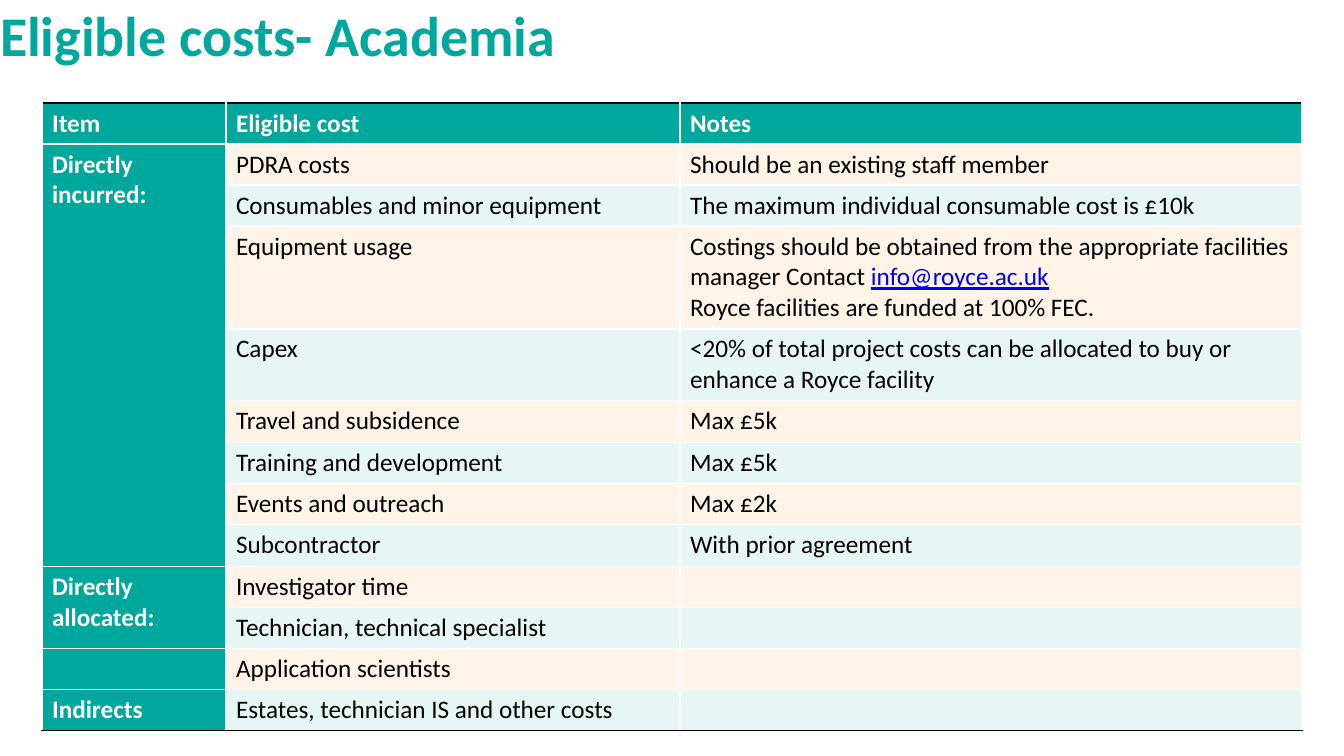
from lxml import etree
from pptx import Presentation, util as u
from pptx.dml.color import RGBColor
from pptx.enum import text
from pptx.oxml import ns

EMU_PER_PX = 914400 / 100.8
TEAL, PEACH, MINT = "00A79D", "FFF4E7", "E6F6F5"
WHITE, BLACK, LINK_BLUE = "FFFFFF", "000000", "0000FF"

HEADINGS = ("Item", "Eligible cost", "Notes")
CONTACT = "info@royce.ac.uk"
COSTS = [
    ("Directly incurred:", "PDRA costs", "Should be an existing staff member"),
    ("", "Consumables and minor equipment",
     "The maximum individual consumable cost is £10k"),
    ("", "Equipment usage",
     "Costings should be obtained from the appropriate facilities manager "
     f"Contact {CONTACT}\nRoyce facilities are funded at 100% FEC."),
    ("", "Capex",
     "<20% of total project costs can be allocated to buy or enhance "
     "a Royce facility"),
    ("", "Travel and subsidence", "Max £5k"),
    ("", "Training and development", "Max £5k"),
    ("", "Events and outreach", "Max £2k"),
    ("", "Subcontractor", "With prior agreement"),
    ("Directly allocated:", "Investigator time", ""),
    ("", "Technician, technical specialist", ""),
    ("", "Application scientists", ""),
    ("Indirects", "Estates, technician IS and other costs", ""),
]
ITEM_SPANS = [(1, 8), (9, 10)]
COLUMN_WIDTHS = (184, 454, 622)
ROW_HEIGHTS = (41, 41, 41, 103, 71, 42, 41, 41, 42, 41, 41, 41, 40)


def px(length):
    return u.Emu(round(length * EMU_PER_PX))


def rgb(value):
    return RGBColor.from_string(value)


def style_run(run, size, color, bold):
    run.font.name = "Calibri"
    run.font.size = u.Pt(size)
    run.font.bold = bold
    run.font.color.rgb = rgb(color)


def set_borders(cell, top, bottom):
    properties = cell._tc.get_or_add_tcPr()
    sides = (("lnL", WHITE), ("lnR", WHITE), ("lnT", top), ("lnB", bottom))
    for side, color in sides:
        line = etree.SubElement(properties, ns.qn(f"a:{side}"), w=str(u.Pt(1)))
        fill = etree.SubElement(line, ns.qn("a:solidFill"))
        etree.SubElement(fill, ns.qn("a:srgbClr"), val=color)


def write_paragraph(paragraph, wording, color, bold):
    before, contact, after = wording.partition(CONTACT)
    for part in filter(None, (before, contact, after)):
        run = paragraph.add_run()
        run.text = part
        style_run(run, 18, LINK_BLUE if part == CONTACT else color, bold)
        if part == CONTACT:
            run.font.underline = True


def write_cell(cell, wording, color, bold):
    frame = cell.text_frame
    for index, line in enumerate(wording.split("\n")):
        paragraph = frame.add_paragraph() if index else frame.paragraphs[0]
        write_paragraph(paragraph, line, color, bold)


def add_title(slide, wording):
    title = slide.shapes.title
    title.left, title.top, title.width, title.height = px(0), px(0), px(646), px(70)
    frame = title.text_frame
    frame.text = wording
    frame.word_wrap = True
    frame.vertical_anchor = text.MSO_ANCHOR.TOP
    frame.margin_left = frame.margin_right = frame.margin_bottom = 0
    frame.margin_top = px(1)
    paragraph = frame.paragraphs[0]
    paragraph.alignment = text.PP_ALIGN.LEFT
    style_run(paragraph.runs[0], 40, TEAL, True)


def add_cost_table(slide):
    rows = [HEADINGS] + COSTS
    table = slide.shapes.add_table(
        len(rows), len(HEADINGS), px(42), px(103),
        px(sum(COLUMN_WIDTHS)), px(sum(ROW_HEIGHTS))).table
    for column, width in zip(table.columns, COLUMN_WIDTHS):
        column.width = px(width)
    for row, height in zip(table.rows, ROW_HEIGHTS):
        row.height = px(height)
    for r, wordings in enumerate(rows):
        for c, wording in enumerate(wordings):
            cell = table.cell(r, c)
            heading = r == 0 or c == 0
            set_borders(cell, BLACK if r == 0 else WHITE,
                        BLACK if r == len(rows) - 1 else WHITE)
            cell.fill.solid()
            band = PEACH if r % 2 else MINT
            cell.fill.fore_color.rgb = rgb(TEAL if heading else band)
            write_cell(cell, wording, WHITE if heading else BLACK, heading)
    for first, last in ITEM_SPANS:
        table.cell(first, 0).merge(table.cell(last, 0))


def main():
    deck = Presentation()
    deck.slide_width, deck.slide_height = px(1344), px(756)
    slide = deck.slides.add_slide(deck.slide_layouts[5])
    add_cost_table(slide)
    add_title(slide, "Eligible costs- Academia")
    deck.save("out.pptx")


if __name__ == "__main__":
    main()
